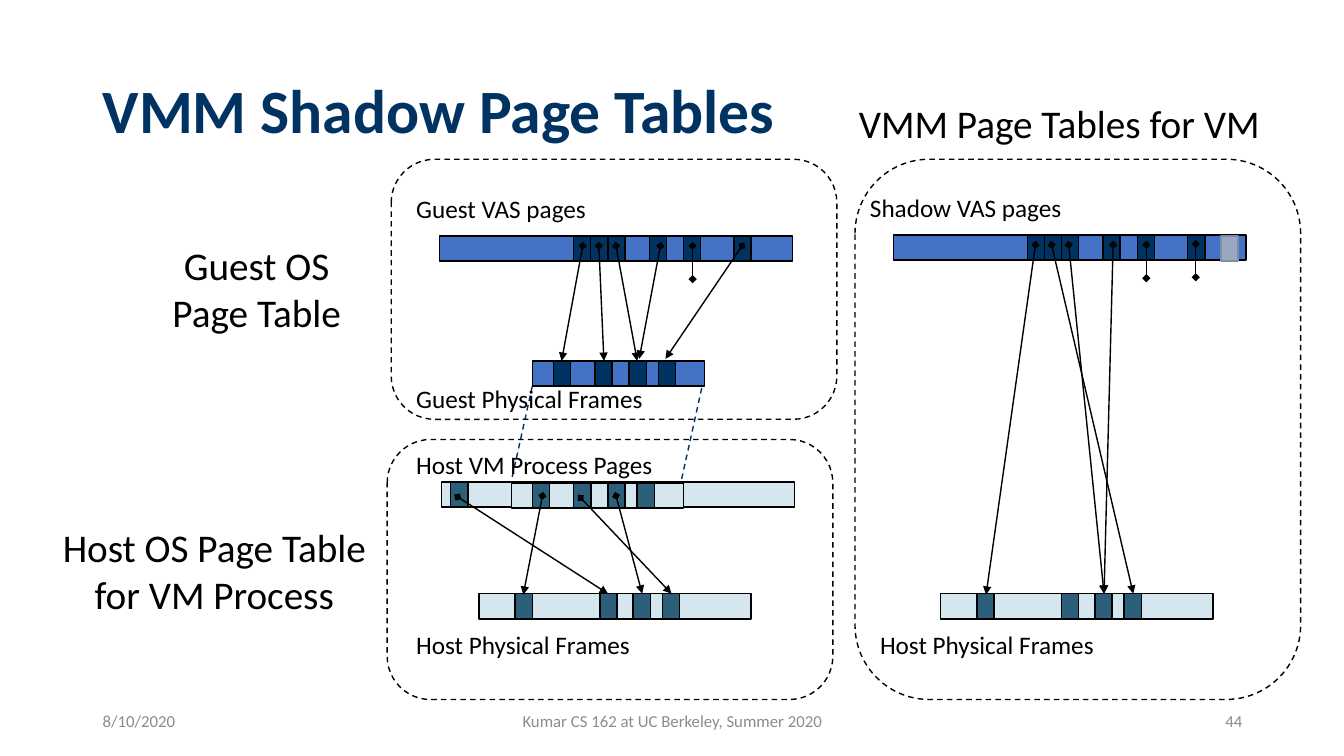
from typing import NamedTuple

from lxml.etree import SubElement
from pptx import Presentation
from pptx.dml.color import RGBColor
from pptx.enum.dml import MSO_LINE_DASH_STYLE as Dash
from pptx.enum.shapes import MSO_CONNECTOR, MSO_SHAPE
from pptx.enum.text import MSO_ANCHOR as Anchor, PP_ALIGN as Align
from pptx.oxml.ns import qn
from pptx.slide import Slide
from pptx.util import Inches, Pt

FONT = "Calibri"
BLACK = RGBColor(0x00, 0x00, 0x00)
NAVY = RGBColor(0x00, 0x32, 0x62)
BLUE = RGBColor(0x44, 0x72, 0xC4)
PALE = RGBColor(0xD5, 0xE6, 0xEF)
TEAL = RGBColor(0x2C, 0x5F, 0x79)
GRAY = RGBColor(0x8C, 0x8C, 0x8C)
FADED = RGBColor(0x99, 0xA8, 0xBD)
FADED_EDGE = RGBColor(0x7A, 0x8E, 0xAA)

BAR_HEIGHT = 0.25
PAGE_WIDTH = 0.17

# Page positions, measured from the left end of their bar
VIRTUAL_PAGES = (1.33, 1.5, 1.67, 2.08, 2.42, 2.92)
GUEST_FRAMES = (0.21, 0.62, 0.96, 1.25)
HOST_FRAMES = (0.36, 1.2, 1.53, 1.82)


class MemoryBar(NamedTuple):
    left: float
    top: float
    width: float
    fill: RGBColor
    page_fill: RGBColor
    pages: tuple[float, ...]


class Mapping(NamedTuple):
    x1: float
    y1: float
    x2: float
    y2: float
    tail: str = "triangle"


class Label(NamedTuple):
    text: str
    left: float
    top: float
    width: float


class Frame(NamedTuple):
    left: float
    top: float
    height: float


BARS = (
    MemoryBar(4.36, 2.34, 3.5, BLUE, NAVY, VIRTUAL_PAGES),
    MemoryBar(5.28, 3.58, 1.71, BLUE, NAVY, GUEST_FRAMES),
    MemoryBar(4.38, 4.78, 3.5, PALE, TEAL, (0.09,)),
    MemoryBar(5.07, 4.79, 1.71, PALE, TEAL, GUEST_FRAMES),
    MemoryBar(4.75, 5.89, 2.7, PALE, TEAL, HOST_FRAMES),
    MemoryBar(8.86, 2.33, 3.5, BLUE, NAVY, VIRTUAL_PAGES),
    MemoryBar(9.33, 5.89, 2.7, PALE, TEAL, HOST_FRAMES),
)
MAPPINGS = (
    # Guest virtual pages to guest frames
    Mapping(5.78, 2.44, 5.57, 3.58),
    Mapping(5.94, 2.44, 5.99, 3.58),
    Mapping(6.11, 2.44, 6.32, 3.58),
    Mapping(6.55, 2.44, 6.34, 3.56),
    Mapping(7.36, 2.44, 6.6, 3.56),
    Mapping(6.87, 2.44, 6.87, 2.77, "diamond"),
    # Host process pages to host frames
    Mapping(4.54, 4.93, 6.03, 5.89),
    Mapping(5.38, 4.92, 5.19, 5.9),
    Mapping(5.76, 4.94, 6.66, 5.89),
    Mapping(6.11, 4.92, 6.37, 5.89),
    # Shadow pages to host frames
    Mapping(10.27, 2.43, 9.78, 5.9),
    Mapping(10.43, 2.43, 11.24, 5.89),
    Mapping(10.6, 2.43, 10.95, 5.89),
    Mapping(11.04, 2.43, 10.95, 5.89),
    Mapping(11.37, 2.43, 11.37, 2.76, "diamond"),
    Mapping(11.86, 2.42, 11.86, 2.75, "diamond"),
)
LABELS = (
    Label("Guest VAS pages", 4.03, 1.87, 1.9),
    Label("Guest Physical Frames", 4.03, 3.75, 2.53),
    Label("Host VM Process Pages", 4.03, 4.41, 2.57),
    Label("Host Physical Frames", 4.03, 6.19, 2.4),
    Label("Shadow VAS pages", 8.53, 1.86, 2.12),
    Label("Host Physical Frames", 8.63, 6.19, 2.4),
)
FRAMES = (Frame(3.88, 1.58, 2.58), Frame(3.84, 4.36, 2.58), Frame(8.48, 1.58, 5.36))


def add_text(slide: Slide, text: str, left: float, top: float, width: float, height: float, *,
             size: int = 18, color: RGBColor = BLACK, bold: bool = False, wrap: bool = True,
             align: Align = Align.LEFT, anchor: Anchor = Anchor.TOP, spacing: float = 1.0) -> None:
    box = slide.shapes.add_textbox(Inches(left), Inches(top), Inches(width), Inches(height))
    text_frame = box.text_frame
    text_frame.word_wrap = wrap
    text_frame.vertical_anchor = anchor
    paragraph = text_frame.paragraphs[0]
    paragraph.alignment = align
    paragraph.line_spacing = spacing
    run = paragraph.add_run()
    run.text = text
    run.font.name = FONT
    run.font.size = Pt(size)
    run.font.bold = bold
    run.font.color.rgb = color


def add_block(slide: Slide, left: float, top: float, width: float, fill: RGBColor,
              edge: RGBColor = BLACK) -> None:
    shape = slide.shapes.add_shape(MSO_SHAPE.ACTION_BUTTON_CUSTOM, Inches(left), Inches(top),
                                   Inches(width), Inches(BAR_HEIGHT))
    shape.shadow.inherit = False
    shape.fill.solid()
    shape.fill.fore_color.rgb = fill
    shape.line.color.rgb = edge
    shape.line.width = Pt(1)


def add_bar(slide: Slide, bar: MemoryBar) -> None:
    add_block(slide, bar.left, bar.top, bar.width, bar.fill)
    for offset in bar.pages:
        add_block(slide, bar.left + offset, bar.top, PAGE_WIDTH, bar.page_fill)


def add_line(slide: Slide, x1: float, y1: float, x2: float, y2: float, *,
             color: RGBColor = BLACK, dash: Dash | None = None,
             head: str | None = None, tail: str | None = None) -> None:
    connector = slide.shapes.add_connector(MSO_CONNECTOR.STRAIGHT, Inches(x1), Inches(y1),
                                           Inches(x2), Inches(y2))
    connector.line.color.rgb = color
    connector.line.width = Pt(1)
    if dash is not None:
        connector.line.dash_style = dash
    outline = connector.line._get_or_add_ln()
    for tag, kind in (("a:headEnd", head), ("a:tailEnd", tail)):
        if kind:
            SubElement(outline, qn(tag), type=kind)
    SubElement(connector._element.spPr, qn("a:effectLst"))


def add_frame(slide: Slide, frame: Frame) -> None:
    shape = slide.shapes.add_shape(MSO_SHAPE.ROUNDED_RECTANGLE, Inches(frame.left),
                                   Inches(frame.top), Inches(4.42), Inches(frame.height))
    shape.shadow.inherit = False
    shape.fill.background()
    shape.line.color.rgb = BLACK
    shape.line.width = Pt(1)
    shape.line.dash_style = Dash.DASH


def main() -> None:
    presentation = Presentation()
    presentation.slide_width = Inches(13.33)
    presentation.slide_height = Inches(7.5)
    slide = presentation.slides.add_slide(presentation.slide_layouts[6])

    # Title and footer
    add_text(slide, "VMM Shadow Page Tables", 0.92, 0.4, 11.5, 1.45, size=44, color=NAVY,
             bold=True, anchor=Anchor.MIDDLE, spacing=0.9)
    for text, left, width, align in (
        ("8/10/2020", 0.92, 3, Align.LEFT),
        ("Kumar CS 162 at UC Berkeley, Summer 2020", 4.42, 4.5, Align.CENTER),
        ("44", 9.42, 3, Align.RIGHT),
    ):
        add_text(slide, text, left, 6.95, width, 0.4, size=12, color=GRAY, align=align,
                 anchor=Anchor.MIDDLE)

    # Guest memory projected into the host process
    add_line(slide, 5.28, 3.83, 5.07, 4.78, color=NAVY, dash=Dash.DASH)
    add_line(slide, 6.96, 3.85, 6.75, 4.8, color=NAVY, dash=Dash.DASH)

    # Memory bars, mappings and their frames
    for bar in BARS:
        add_bar(slide, bar)
    add_block(slide, 12.11, 2.34, PAGE_WIDTH, FADED, FADED_EDGE)
    for label in LABELS:
        add_text(slide, label.text, label.left, label.top, label.width, 0.4, wrap=False)
    for x1, y1, x2, y2, tail in MAPPINGS:
        add_line(slide, x1, y1, x2, y2, head="diamond", tail=tail)
    for frame in FRAMES:
        add_frame(slide, frame)

    # Headings
    add_text(slide, "Guest OS Page Table", 1.49, 2.34, 2.11, 1.04, size=28, align=Align.CENTER)
    add_text(slide, "Host OS Page Table for VM Process", 0.47, 5.14, 3.31, 1.04, size=28,
             align=Align.CENTER)
    add_text(slide, "VMM Page Tables for VM", 8.42, 0.94, 4.22, 0.57, size=28, wrap=False)

    presentation.save("out.pptx")


if __name__ == "__main__":
    main()
